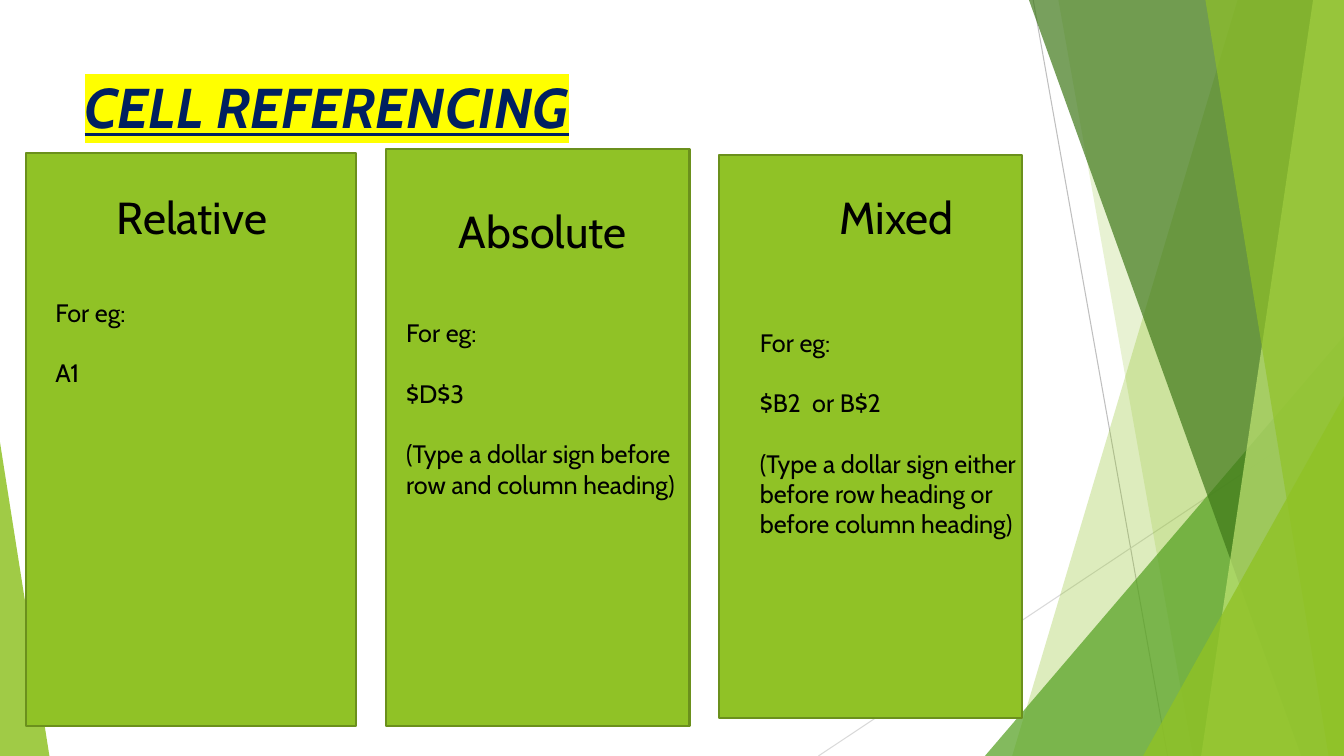
from dataclasses import dataclass

from lxml import etree
from pptx import Presentation
from pptx.dml.color import RGBColor
from pptx.enum import shapes, text
from pptx.oxml.ns import qn
from pptx.util import Pt


@dataclass(frozen=True)
class Theme:
    font: str = "Cabin"
    lime: str = "90C226"
    leaf: str = "54A021"
    moss: str = "3F7819"
    pale: str = "C0E474"
    edge: str = "6B901C"
    gray: str = "BFBFBF"
    mist: str = "D9D9D9"
    navy: str = "002060"
    mark: str = "FFFF00"
    ink: str = "000000"
    title: int = 40
    head: int = 32
    body: int = 18
    gap: float = 21.6


WIDE, HIGH = 960, 540


class Deck:
    def __init__(self, theme):
        self.theme = theme
        self.prs = Presentation()
        self.prs.slide_width, self.prs.slide_height = Pt(WIDE), Pt(HIGH)
        self.slide = self.prs.slides.add_slide(self.prs.slide_layouts[5])
        self.shapes = self.slide.shapes

    def paint(self, shape, color, alpha=100, edge=None):
        shape.shadow.inherit = False
        shape.fill.solid()
        shape.fill.fore_color.rgb = RGBColor.from_string(color)
        if alpha < 100:
            clr = shape.fill._xPr.find(qn("a:solidFill"))[0]
            etree.SubElement(clr, qn("a:alpha"), val=str(alpha * 1000))
        if edge:
            shape.line.color.rgb = RGBColor.from_string(edge)
            shape.line.width = Pt(1.5)
        else:
            shape.line.fill.background()

    def line(self, x1, y1, x2, y2, color):
        line = self.shapes.add_connector(
            shapes.MSO_CONNECTOR.STRAIGHT, Pt(x1), Pt(y1), Pt(x2), Pt(y2))
        line.line.color.rgb = RGBColor.from_string(color)
        line.line.width = Pt(0.75)
        etree.SubElement(line._element.spPr, qn("a:effectLst"))

    def facet(self, top, base, color, alpha):
        """Fill from a slanted edge to the right side of the slide."""
        form = self.shapes.build_freeform(Pt(top), 0)
        form.add_line_segments(
            [(Pt(x), Pt(y)) for x, y in ((WIDE, 0), (WIDE, HIGH), (base, HIGH))])
        self.paint(form.convert_to_shape(), color, alpha)

    def wedge(self, x, y, wide, tip, color, alpha):
        """Draw a triangle that stands on the bottom of the slide."""
        shape = self.shapes.add_shape(
            shapes.MSO_SHAPE.ISOSCELES_TRIANGLE,
            Pt(x), Pt(y), Pt(wide), Pt(HIGH - y))
        shape.adjustments[0] = tip
        self.paint(shape, color, alpha)

    def title(self, words, x, y, wide, high):
        box = self.shapes.title
        box.left, box.top, box.width, box.height = map(Pt, (x, y, wide, high))
        frame = box.text_frame
        frame.auto_size = text.MSO_AUTO_SIZE.NONE
        frame.vertical_anchor = text.MSO_ANCHOR.TOP
        para = frame.paragraphs[0]
        para.alignment = text.PP_ALIGN.LEFT
        run = para.add_run()
        run.text = words
        font = run.font
        font.name, font.size = self.theme.font, Pt(self.theme.title)
        font.bold = font.italic = font.underline = True
        font.color.rgb = RGBColor.from_string(self.theme.navy)
        mark = etree.Element(qn("a:highlight"))
        etree.SubElement(mark, qn("a:srgbClr"), val=self.theme.mark)
        font._element.find(qn("a:latin")).addprevious(mark)

    def card(self, x, y, wide, high):
        shape = self.shapes.add_shape(
            shapes.MSO_SHAPE.RECTANGLE, Pt(x), Pt(y), Pt(wide), Pt(high))
        self.paint(shape, self.theme.lime, edge=self.theme.edge)

    def notes(self, x, y, high, drop, head, lines):
        """Write a centred heading, then lines that start a drop below it."""
        theme = self.theme
        frame = self.shapes.add_textbox(
            Pt(x), Pt(y), Pt(209.5), Pt(high)).text_frame
        frame.word_wrap = True
        for i, words in enumerate([head, *lines]):
            para = frame.add_paragraph() if i else frame.paragraphs[0]
            para.text = words
            para.font.name = theme.font
            para.font.size = Pt(theme.body if i else theme.head)
            para.font.color.rgb = RGBColor.from_string(theme.ink)
            if i:
                para.space_before = Pt(drop if i == 1 else theme.gap)
            else:
                para.alignment = text.PP_ALIGN.CENTER


def main():
    look = Theme()
    deck = Deck(look)

    deck.line(738, 0, 834, HIGH, look.gray)
    deck.line(WIDE, 290, 584.6, HIGH, look.mist)
    deck.facet(884, 723, look.lime, 30)
    deck.facet(756, 852, look.lime, 20)
    deck.wedge(703.5, 240, 256.5, 1, look.leaf, 72)
    deck.facet(735, 929.5, look.moss, 70)
    deck.facet(938, 858, look.pale, 70)
    deck.facet(861, 949, look.lime, 65)
    deck.wedge(816.5, 283, 143.5, 1, look.lime, 80)
    deck.wedge(0, 316, 35.3, 0, look.lime, 85)

    deck.title("CELL REFERENCING", 53.3, 48.2, 676.8, 103.7)

    cards = [
        ((18.7, 109.4, 235.4, 409), (32.4, 131.8, 249.8, 38.4),
         "Relative", ["A1"]),
        ((275.8, 106.6, 216.7, 411.8), (283, 141.8, 264.2, 43.2),
         "Absolute",
         ["$D$3", "(Type a dollar sign before row and column heading)"]),
        ((513.4, 110.9, 216.7, 401.8), (535.7, 131.8, 303.1, 60),
         "Mixed",
         ["$B2  or B$2", "(Type a dollar sign either before row heading "
          "or before column heading)"]),
    ]
    for box, place, head, lines in cards:
        deck.card(*box)
        deck.notes(*place, head, ["For eg:", *lines])

    deck.prs.save("out.pptx")


if __name__ == "__main__":
    main()
